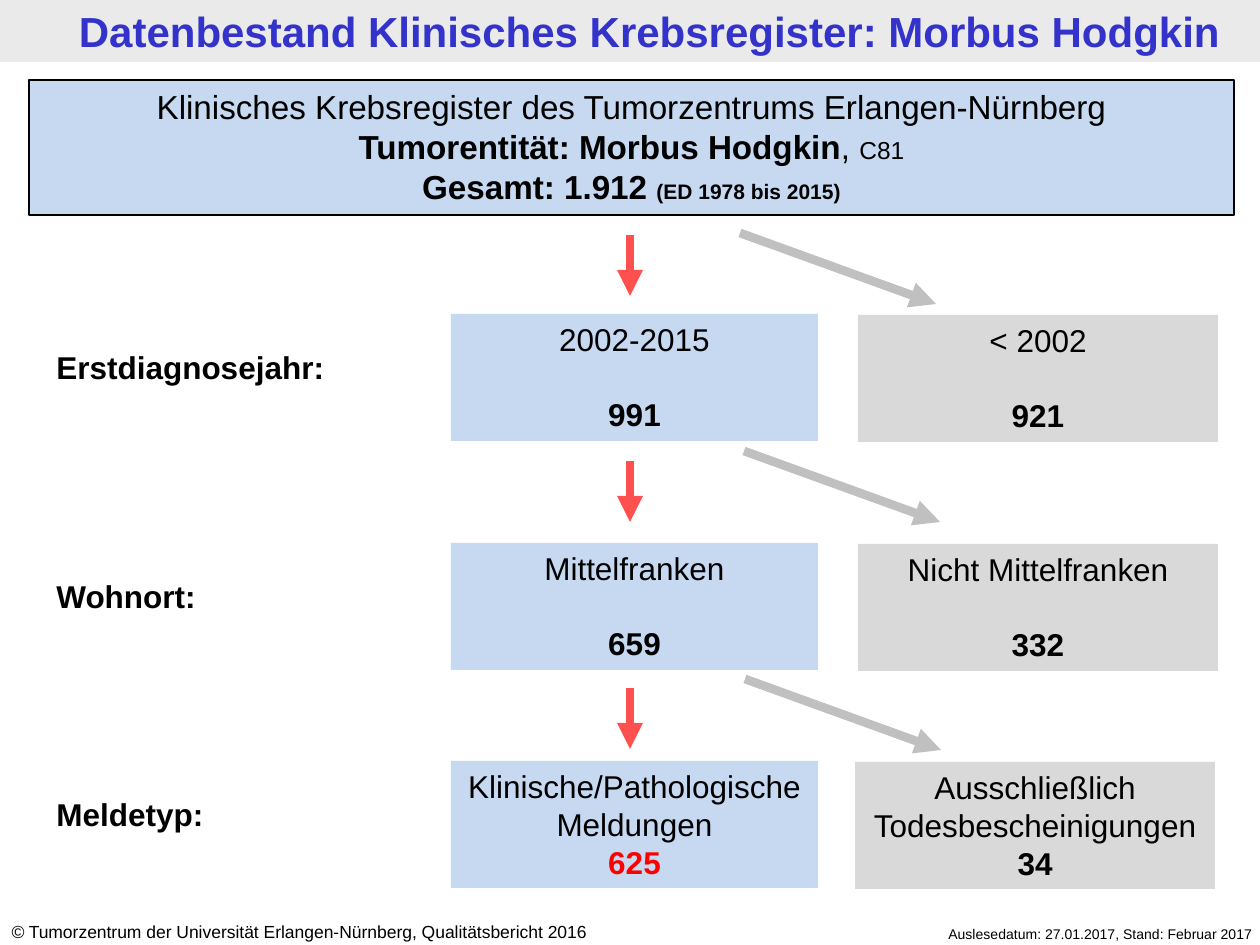
import pptx
import pptx.util
from pptx.dml.color import RGBColor
from pptx.enum.shapes import MSO_CONNECTOR, MSO_SHAPE
from pptx.enum.text import MSO_ANCHOR, PP_ALIGN
from pptx.oxml.ns import qn
from lxml import etree

COLORS = {
    "black": "000000", "blue": "C6D9F1", "gray": "D9D9D9", "band": "EAEAEA",
    "title": "3333CC", "result": "FF0000", "kept": "FF5050", "excluded": "C0C0C0",
}
PX = 914400 / 126
FONT = "Arial"
LINE_GAP = 21  # points, one line of box text


def px(value):
    return pptx.util.Emu(round(value * PX))


def color(name):
    return RGBColor.from_string(COLORS[name])


class Slide:
    def __init__(self, deck):
        self.page = deck.slides.add_slide(deck.slide_layouts[6])

    def fill_text(self, box, lines, size, align=PP_ALIGN.CENTER, bold=False, ink="black"):
        """Each line is a list of (text, overrides) spans."""
        frame = box.text_frame
        frame.word_wrap = True
        frame.vertical_anchor = MSO_ANCHOR.TOP
        for index, spans in enumerate(lines):
            para = frame.paragraphs[0] if index == 0 else frame.add_paragraph()
            para.alignment = align
            para.font.name = FONT
            para.font.size = pptx.util.Pt(size)
            para.font.bold = bold
            para.font.color.rgb = color(ink)
            for text, look in spans:
                span = para.add_run()
                span.text = text
                if "size" in look:
                    span.font.size = pptx.util.Pt(look["size"])
                if "bold" in look:
                    span.font.bold = look["bold"]
                if "italic" in look:
                    span.font.italic = look["italic"]
                if "ink" in look:
                    span.font.color.rgb = color(look["ink"])
        return frame

    def rect(self, area, fill, outline=False):
        box = self.page.shapes.add_shape(MSO_SHAPE.RECTANGLE, *map(px, area))
        box.shadow.inherit = False
        box.fill.solid()
        box.fill.fore_color.rgb = color(fill)
        if outline:
            box.line.color.rgb = color("black")
            box.line.width = pptx.util.Pt(0.75)
        else:
            box.line.fill.background()
        return box

    def text(self, area, lines, size, **look):
        box = self.page.shapes.add_textbox(*map(px, area))
        return self.fill_text(box, lines, size, **look)

    def count_box(self, area, fill, label, count, ink="black", gap=0):
        lines = [[(label, {})], [(count, {"bold": True, "ink": ink})]]
        frame = self.fill_text(self.rect(area, fill), lines, 18)
        frame.paragraphs[1].space_before = pptx.util.Pt(gap)

    def arrow(self, start, end, ink):
        arrow = self.page.shapes.add_connector(
            MSO_CONNECTOR.STRAIGHT, *map(px, (*start, *end)))
        arrow.line.color.rgb = color(ink)
        arrow.line.width = pptx.util.Pt(5)
        properties = arrow._element.spPr
        etree.SubElement(properties.find(qn("a:ln")), qn("a:tailEnd"), type="triangle")
        etree.SubElement(properties, qn("a:effectLst"))


def main():
    deck = pptx.Presentation()
    deck.slide_width, deck.slide_height = px(1260), px(945)
    slide = Slide(deck)

    # Title band
    slide.rect((0, 0, 1260, 62), "band")
    title = slide.text(
        (8, 1, 1260, 62),
        [[("Datenbestand Klinisches Krebsregister: Morbus Hodgkin", {})]],
        24, bold=True, ink="title")
    title.margin_left, title.margin_right = px(34), px(11)
    title.margin_top = title.margin_bottom = px(5)

    # Registry total
    header = slide.rect((29, 80, 1205, 135), "blue", outline=True)
    slide.fill_text(header, [
        [("Klinisches Krebsregister des Tumorzentrums Erlangen-Nürnberg", {})],
        [("Tumorentität: Morbus Hodgkin", {"bold": True}), (", ", {}),
         ("C81", {"size": 14})],
        [("Gesamt: 1.912 ", {"bold": True}),
         ("(ED 1978 bis 2015)", {"bold": True, "size": 12})],
    ], 19)

    # Selection steps: top, label, kept, excluded, excluded left, ink, gap, arrow starts
    steps = [
        (314, "Erstdiagnosejahr:", ("2002-2015", "991"), ("< 2002", "921"),
         858, "black", LINE_GAP, 235, (740, 233)),
        (543, "Wohnort:", ("Mittelfranken", "659"), ("Nicht Mittelfranken", "332"),
         858, "black", LINE_GAP, 461, (744, 451)),
        (761, "Meldetyp:", ("Klinische/Pathologische Meldungen", "625"),
         ("Ausschließlich Todesbescheinigungen", "34"),
         855, "result", 0, 688, (745, 679)),
    ]
    for top, label, kept, excluded, left, ink, gap, down, (x, y) in steps:
        slide.arrow((630, down), (630, down + 61), "kept")
        slide.arrow((x, y), (x + 196, y + 71), "excluded")
        slide.text((44, top + 28, 348, 50), [[(label, {})]], 18,
                   align=PP_ALIGN.LEFT, bold=True)
        slide.count_box((451, top, 367, 127), "blue", *kept, ink=ink, gap=gap)
        slide.count_box((left, top + 1, 360, 127), "gray", *excluded, gap=gap)

    # Footer
    slide.text((-1, 915, 660, 34), [[
        ("©", {"italic": True}),
        (" Tumorzentrum der Universität Erlangen-Nürnberg, Qualitätsbericht 2016", {}),
    ]], 10, align=PP_ALIGN.LEFT)
    slide.text((838, 919, 427, 30),
               [[("Auslesedatum: 27.01.2017, Stand: Februar 2017", {})]],
               8, align=PP_ALIGN.RIGHT)

    deck.save("out.pptx")


if __name__ == "__main__":
    main()
